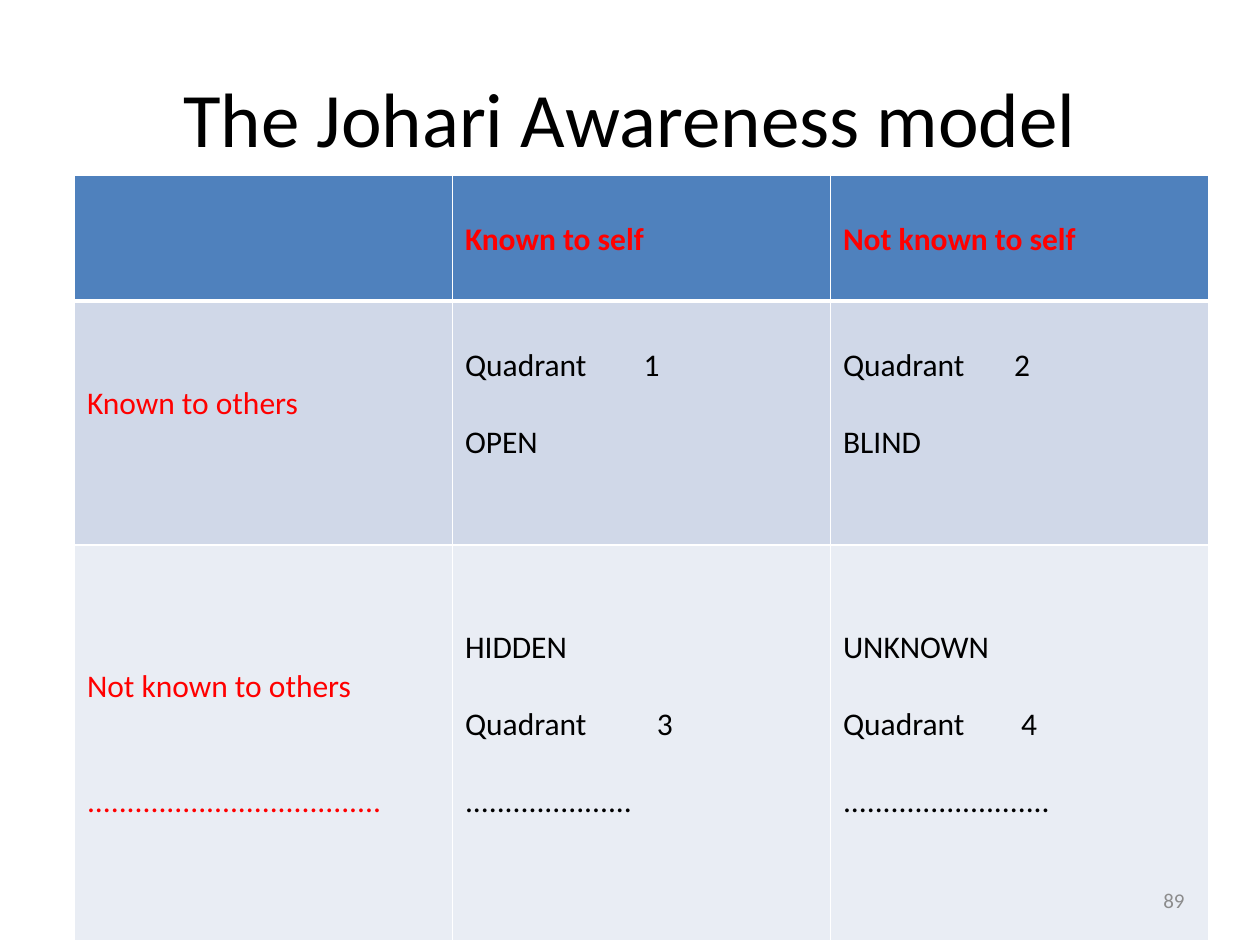
"""Build the Johari Awareness model slide."""
import pptx
import pptx.dml.color
import pptx.enum.text
import pptx.oxml.xmlchemy
import pptx.util
from lxml import etree
from pptx.oxml.ns import qn
from pptx.util import Cm, Pt

ALIGN = pptx.enum.text.PP_ALIGN
MIDDLE = pptx.enum.text.MSO_ANCHOR.MIDDLE
RED, BLACK, WHITE, GREY = "FF0000", "000000", "FFFFFF", "8C8C8C"
LINE_PT = 22
COLUMN_WIDTH = 7.62
ROW_HEIGHTS = (2.54, 4.92, 7.98)
ROW_FILLS = ("4F81BD", "D0D8E8", "E9EDF4")
# Each entry: lines of space above, text, optional tab stop in cm
GRID = (
    ((), ((1, "Known to self"),), ((1, "Not known to self"),)),
    (
        ((2, "Known to others"),),
        ((1, "Quadrant\t1", 3.6), (1, "OPEN")),
        ((1, "Quadrant\t2", 3.45), (1, "BLIND")),
    ),
    (
        ((3, "Not known to others"), (2, "." * 37)),
        ((2, "HIDDEN"), (1, "Quadrant\t3", 3.87), (1, "." * 21)),
        ((2, "UNKNOWN"), (1, "Quadrant\t4", 3.59), (1, "." * 26)),
    ),
)


def rgb(value):
    """Return the colour for a hex string."""
    return pptx.dml.color.RGBColor.from_string(value)


def write(paragraph, text, size=18, color=BLACK, bold=False,
          align=ALIGN.LEFT, before=0, tab=None):
    """Put formatted text into a paragraph."""
    paragraph.alignment = align
    paragraph.space_before = Pt(before)
    if tab:
        properties = paragraph._p.get_or_add_pPr()
        stops = etree.SubElement(properties, qn("a:tabLst"))
        etree.SubElement(stops, qn("a:tab"), pos=str(Cm(tab)), algn="l")
    run = paragraph.add_run()
    run.text = text
    run.font.name = "Calibri"
    run.font.size = Pt(size)
    run.font.bold = bold
    run.font.color.rgb = rgb(color)


def add_borders(cell, bottom):
    """Draw white borders round a cell, with the given bottom width."""
    properties = cell._tc.get_or_add_tcPr()
    widths = {"lnL": 1, "lnR": 1, "lnT": 1, "lnB": bottom}
    for position, (side, width) in enumerate(widths.items()):
        line = etree.Element(qn(f"a:{side}"), w=str(Pt(width)))
        fill = etree.SubElement(line, qn("a:solidFill"))
        etree.SubElement(fill, qn("a:srgbClr"), val=WHITE)
        properties.insert(position, line)


def fill_cell(cell, entries, color, bold):
    """Write the entries of a cell, spaced in whole lines."""
    for index, (lines, text, *tab) in enumerate(entries):
        if index:
            paragraph = cell.text_frame.add_paragraph()
        else:
            paragraph = cell.text_frame.paragraphs[0]
            cell.margin_top = Cm(0.13) + Pt(lines * LINE_PT)
        write(paragraph, text, color=color, bold=bold,
              before=lines * LINE_PT if index else 0,
              tab=tab[0] if tab else None)


def add_title(slide, text):
    """Place and format the slide title."""
    title = slide.shapes.title
    title.left, title.top = Cm(1.27), Cm(0.76)
    title.width, title.height = Cm(22.86), Cm(3.18)
    title.text_frame.vertical_anchor = MIDDLE
    write(title.text_frame.paragraphs[0], text, size=44, align=ALIGN.CENTER)


def add_quadrants(slide):
    """Add the table of the four quadrants."""
    table = slide.shapes.add_table(
        len(GRID), len(GRID[0]), Cm(1.5), Cm(3.53),
        Cm(COLUMN_WIDTH * len(GRID[0])), Cm(sum(ROW_HEIGHTS))).table
    table.first_row = table.horz_banding = False
    for column in table.columns:
        column.width = Cm(COLUMN_WIDTH)
    for row, entries_by_column in enumerate(GRID):
        table.rows[row].height = Cm(ROW_HEIGHTS[row])
        for column, entries in enumerate(entries_by_column):
            cell = table.cell(row, column)
            cell.fill.solid()
            cell.fill.fore_color.rgb = rgb(ROW_FILLS[row])
            is_header = row == 0
            add_borders(cell, bottom=3 if is_header else 1)
            label_color = RED if is_header or column == 0 else BLACK
            fill_cell(cell, entries, label_color, bold=is_header)


def add_page_number(slide, number):
    """Add the page number at the lower right."""
    page = slide.shapes.add_textbox(Cm(18.2), Cm(17.65), Cm(5.93), Cm(1.01))
    page.text_frame.word_wrap = True
    page.text_frame.vertical_anchor = MIDDLE
    write(page.text_frame.paragraphs[0], number, size=12, color=GREY,
          align=ALIGN.RIGHT)


def main():
    """Build and save the presentation."""
    deck = pptx.Presentation()
    deck.slide_width, deck.slide_height = Cm(25.4), Cm(19.05)
    slide = deck.slides.add_slide(deck.slide_layouts[5])
    add_title(slide, "The Johari Awareness model")
    add_quadrants(slide)
    add_page_number(slide, "89")
    deck.save("out.pptx")


if __name__ == "__main__":
    main()
